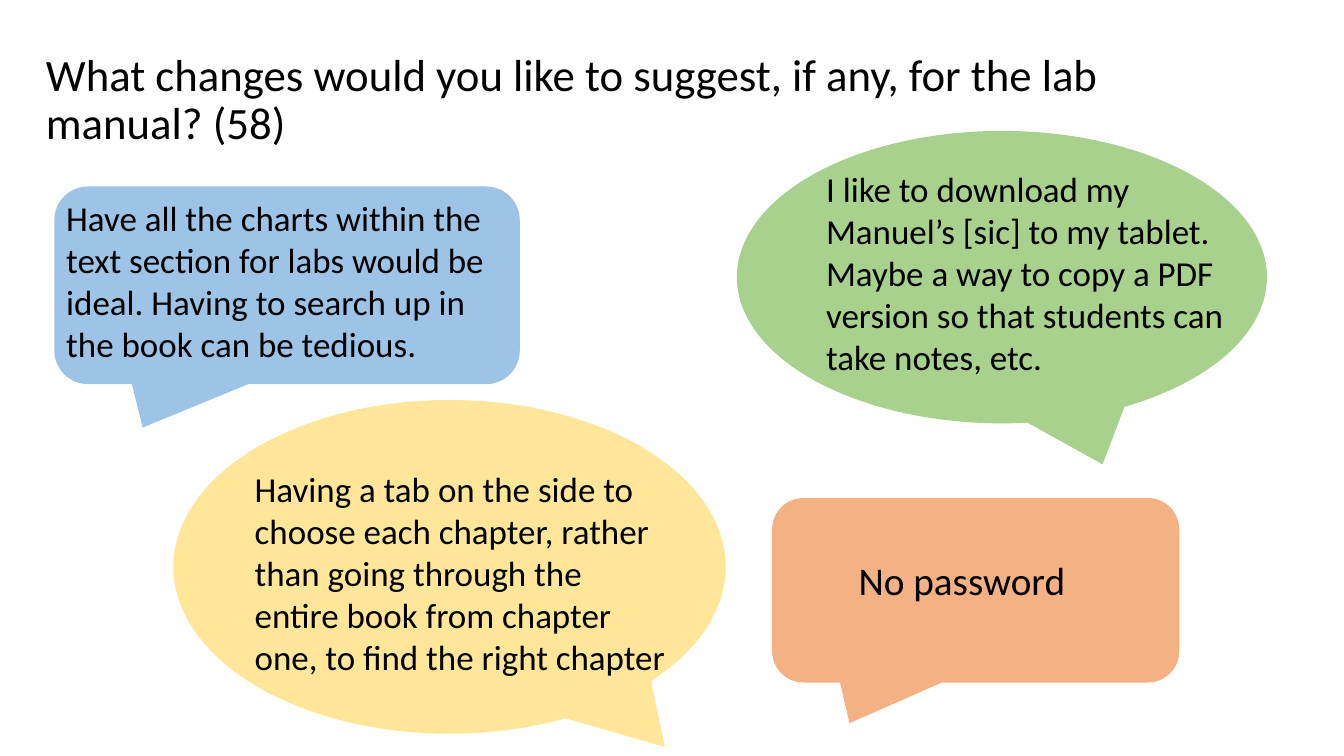
from pptx import Presentation
from pptx.dml.color import RGBColor
from pptx.enum.shapes import MSO_SHAPE as Shape
from pptx.enum.text import MSO_ANCHOR as Anchor
from pptx.util import Cm, Pt

BLACK = RGBColor(0x00, 0x00, 0x00)
BLUE = RGBColor(0x9D, 0xC3, 0xE6)
GREEN = RGBColor(0xA9, 0xD1, 0x8E)
ORANGE = RGBColor(0xF4, 0xB1, 0x83)
YELLOW = RGBColor(0xFF, 0xE6, 0x99)

ROUND = Shape.ROUNDED_RECTANGULAR_CALLOUT
OVAL = Shape.OVAL_CALLOUT
ROUND_TAIL = (-0.31, 0.72, 0.17)

TITLE = "What changes would you like to suggest, if any, for the lab manual? (58)"

BUBBLES = [
    (ROUND, (1.37, 4.7, 11.73, 4.98), ROUND_TAIL, BLUE),
    (OVAL, (18.57, 3.3, 13.36, 7.37), (0.19, 0.64), GREEN),
    (ROUND, (19.46, 12.55, 10.26, 4.65), ROUND_TAIL, ORANGE),
    (OVAL, (4.37, 10.08, 13.92, 8.41), (0.39, 0.54), YELLOW),
]

QUOTES = [
    ("I like to download my Manuel’s [sic] to my tablet. Maybe a way to copy "
     "a PDF version so that students can take notes, etc.",
     (20.57, 4.09, 10.9, 5.59), 25),
    ("No password", (21.39, 13.89, 10.52, 1.45), 28),
    ("Having a tab on the side to choose each chapter, rather than going "
     "through the entire book from chapter one, to find the right chapter",
     (6.17, 11.66, 10.9, 5.59), 25),
    ("Have all the charts within the text section for labs would be ideal. "
     "Having to search up in the book can be tedious.",
     (1.42, 4.83, 11.68, 4.52), 25),
]


def add_bubble(slide, kind, box, tail, fill):
    """Add a plain speech bubble with its tail set."""
    bubble = slide.shapes.add_shape(kind, *map(Cm, box))
    for i, value in enumerate(tail):
        bubble.adjustments[i] = value
    bubble.shadow.inherit = False
    bubble.fill.solid()
    bubble.fill.fore_color.rgb = fill
    bubble.line.fill.background()


def add_text(slide, text, box, size, anchor=Anchor.TOP, spacing=1.0):
    """Add a wrapped block of black text."""
    frame = slide.shapes.add_textbox(*map(Cm, box)).text_frame
    frame.word_wrap = True
    frame.vertical_anchor = anchor
    frame.text = text
    para = frame.paragraphs[0]
    para.line_spacing = spacing
    font = para.runs[0].font
    font.name = "Calibri"
    font.size = Pt(size)
    font.color.rgb = BLACK


def main():
    """Build the slide of suggestions and save it."""
    deck = Presentation()
    deck.slide_width = Cm(33.87)
    deck.slide_height = Cm(19.05)
    slide = deck.slides.add_slide(deck.slide_layouts[6])
    add_text(slide, TITLE, (0.91, 0.71, 30.18, 3.68), 32, Anchor.MIDDLE, 0.9)
    for bubble in BUBBLES:
        add_bubble(slide, *bubble)
    for quote in QUOTES:
        add_text(slide, *quote)
    deck.save("out.pptx")


if __name__ == "__main__":
    main()
